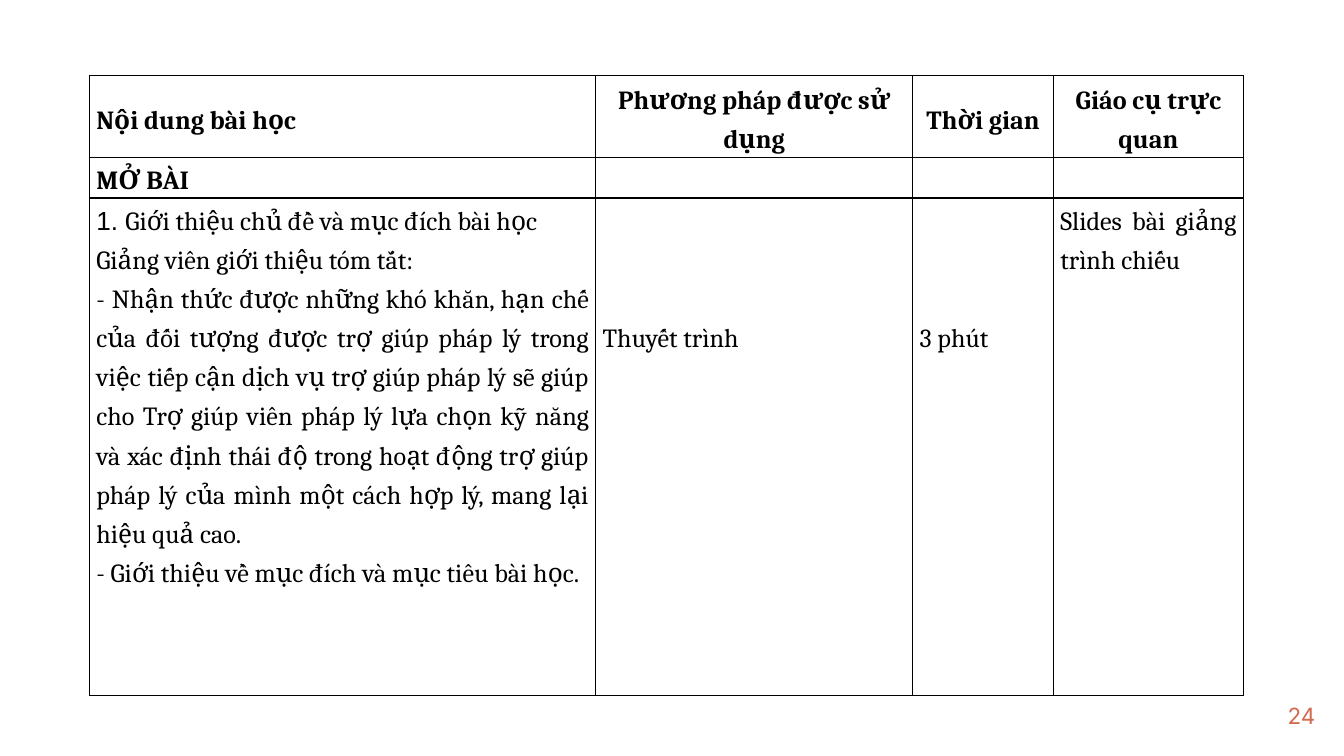
from lxml import etree
from pptx import Presentation
from pptx.dml.color import RGBColor
from pptx.enum.text import MSO_ANCHOR, PP_ALIGN
from pptx.oxml.ns import qn
from pptx.util import Cm, Pt

LEFT, CENTER, RIGHT, JUSTIFY = PP_ALIGN.LEFT, PP_ALIGN.CENTER, PP_ALIGN.RIGHT, PP_ALIGN.JUSTIFY
TOP, MIDDLE = MSO_ANCHOR.TOP, MSO_ANCHOR.MIDDLE
BLACK = RGBColor(0x00, 0x00, 0x00)
ORANGE = RGBColor(0xD2, 0x6A, 0x50)

HEADERS = ["Nội dung bài học", "Phương pháp được sử dụng", "Thời gian", "Giáo cụ trực quan"]
SECTION = "MỞ BÀI"
ITEM_NUMBER = "1. "
CONTENT = [
    "Giới thiệu chủ đề và mục đích bài học",
    "Giảng viên giới thiệu tóm tắt:",
    "- Nhận thức được những khó khăn, hạn chế của đối tượng được trợ giúp pháp lý "
    "trong việc tiếp cận dịch vụ trợ giúp pháp lý sẽ giúp cho Trợ giúp viên pháp lý "
    "lựa chọn kỹ năng và xác định thái độ trong hoạt động trợ giúp pháp lý của mình "
    "một cách hợp lý, mang lại hiệu quả cao.",
    "- Giới thiệu về mục đích và mục tiêu bài học.",
]
METHOD, DURATION, MATERIALS = "Thuyết trình", "3 phút", "Slides bài giảng trình chiếu"
PAGE_NUMBER = "24"

COLUMN_WIDTHS = [9.57, 5.99, 2.66, 3.59]
ROW_HEIGHTS = [1.47, 0.74, 9.41]
THREE_LINES = 2.22


def add_borders(cell):
    properties = cell._tc.get_or_add_tcPr()
    for index, side in enumerate(("a:lnL", "a:lnR", "a:lnT", "a:lnB")):
        line = etree.Element(qn(side), w=str(Pt(0.75)))
        fill = etree.SubElement(line, qn("a:solidFill"))
        etree.SubElement(fill, qn("a:srgbClr"), val=str(BLACK))
        properties.insert(index, line)


def style_paragraph(para, align, bold):
    para.alignment = align
    para.line_spacing = 1.3
    para.font.name = "Cambria"
    para.font.size = Pt(14)
    para.font.bold = bold
    para.font.color.rgb = BLACK


def fill_cell(cell, lines, align=JUSTIFY, bold=False, anchor=TOP, top=0):
    cell.vertical_anchor = anchor
    cell.margin_top = Cm(top)
    frame = cell.text_frame
    frame.text = "\n".join(lines)
    for para in frame.paragraphs:
        style_paragraph(para, align, bold)


def add_lesson_table(page):
    frame = page.shapes.add_table(
        len(ROW_HEIGHTS), len(COLUMN_WIDTHS), Cm(1.69), Cm(1.43),
        Cm(sum(COLUMN_WIDTHS)), Cm(sum(ROW_HEIGHTS)))
    table = frame.table
    table.first_row = table.horz_banding = False
    for column, width in zip(table.columns, COLUMN_WIDTHS):
        column.width = Cm(width)
    for row, height in zip(table.rows, ROW_HEIGHTS):
        row.height = Cm(height)
    for cell in table.iter_cells():
        cell.fill.background()
        add_borders(cell)
        cell.margin_left = cell.margin_right = Cm(0.13)
        cell.margin_top = cell.margin_bottom = 0
        cell.text_frame.paragraphs[0].font.size = Pt(10)

    for column, header in enumerate(HEADERS):
        fill_cell(table.cell(0, column), [header], CENTER if column else LEFT, True, MIDDLE)
    fill_cell(table.cell(1, 0), [SECTION], bold=True)

    content = table.cell(2, 0)
    fill_cell(content, [ITEM_NUMBER] + CONTENT[1:])
    first = content.text_frame.paragraphs[0]
    first.runs[0].font.name = "Arial"
    first.add_run().text = CONTENT[0]
    fill_cell(table.cell(2, 1), [METHOD], top=THREE_LINES)
    fill_cell(table.cell(2, 2), [DURATION], top=THREE_LINES)
    fill_cell(table.cell(2, 3), [MATERIALS])


def add_page_number(page):
    box = page.shapes.add_textbox(Cm(23.34), Cm(12.98), Cm(1.52), Cm(1.09))
    frame = box.text_frame
    frame.word_wrap = True
    frame.vertical_anchor = MIDDLE
    frame.margin_left = frame.margin_right = frame.margin_top = frame.margin_bottom = 0
    para = frame.paragraphs[0]
    para.text = PAGE_NUMBER
    para.alignment = RIGHT
    para.font.name = "Inter"
    para.font.size = Pt(12)
    para.font.color.rgb = ORANGE


def main():
    deck = Presentation()
    deck.slide_width, deck.slide_height = Cm(25.4), Cm(14.29)
    page = deck.slides.add_slide(deck.slide_layouts[6])
    add_page_number(page)
    add_lesson_table(page)
    deck.save("out.pptx")


if __name__ == "__main__":
    main()
